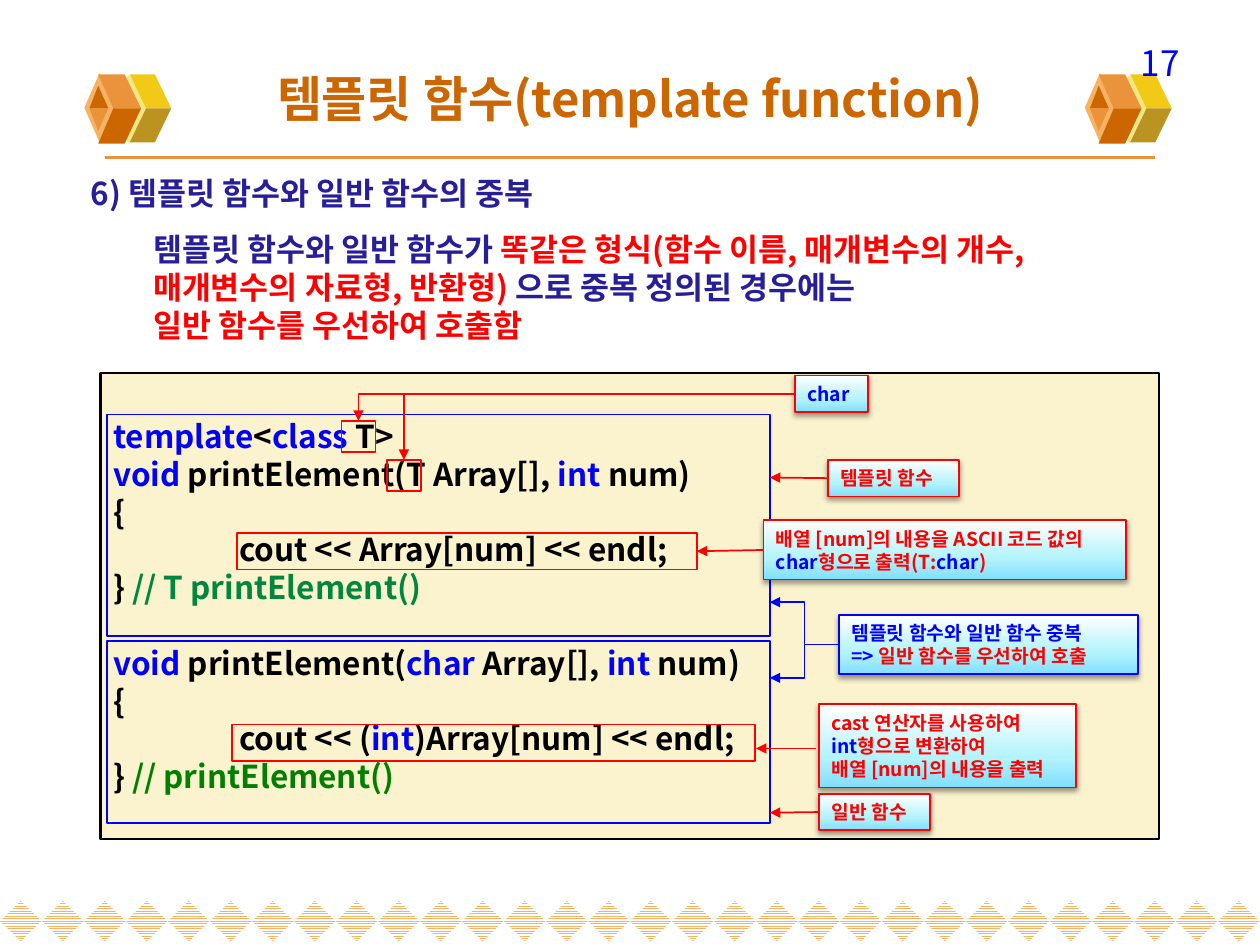
from lxml import etree
from pptx import Presentation
from pptx.dml.color import RGBColor
from pptx.enum.dml import MSO_PATTERN
from pptx.enum.shapes import MSO_CONNECTOR, MSO_SHAPE
from pptx.enum.text import MSO_ANCHOR, PP_ALIGN
from pptx.oxml.ns import qn
from pptx.util import Inches, Pt

RECT, DIAMOND = MSO_SHAPE.RECTANGLE, MSO_SHAPE.DIAMOND
STRAIGHT, ELBOW = MSO_CONNECTOR.STRAIGHT, MSO_CONNECTOR.ELBOW
LEFT, CENTER, RIGHT, JUSTIFY = PP_ALIGN.LEFT, PP_ALIGN.CENTER, PP_ALIGN.RIGHT, PP_ALIGN.JUSTIFY
TOP, MIDDLE = MSO_ANCHOR.TOP, MSO_ANCHOR.MIDDLE
FONT = "Noto Sans CJK KR"
RED, BLUE, BLACK, NAVY, ORANGE = "FF0000", "0000FF", "000000", "271E98", "CC6600"
rgb = RGBColor.from_string

prs = Presentation()
prs.slide_width, prs.slide_height = Inches(10), Inches(7.5)
s = prs.slides.add_slide(prs.slide_layouts[6])


def add_box(at, shape=RECT, fill=None, line=None, width=1):
    sp = s.shapes.add_shape(shape, *map(Inches, at))
    sp.shadow.inherit = False
    if fill:
        sp.fill.solid()
        sp.fill.fore_color.rgb = rgb(fill)
    else:
        sp.fill.background()
    if line:
        sp.line.color.rgb = rgb(line)
        sp.line.width = Pt(width)
    else:
        sp.line.fill.background()
    return sp


def write(sp, paragraphs, size, align=LEFT, anchor=TOP, bold=True):
    """Each paragraph is a list of (text, colour) runs."""
    tf = sp.text_frame
    for name, value in {"word_wrap": True, "vertical_anchor": anchor}.items():
        setattr(tf, name, value)
    for i, runs in enumerate(paragraphs):
        p = tf.paragraphs[0] if i == 0 else tf.add_paragraph()
        p.alignment = align
        p.line_spacing = Pt(round(size * 1.2, 1))
        for text, color in runs:
            if text == "\n":
                p.add_line_break()
                continue
            r = p.add_run()
            r.text = text
            for name, value in {"name": FONT, "size": Pt(size), "bold": bold}.items():
                setattr(r.font, name, value)
            r.font.color.rgb = rgb(color)
            etree.SubElement(r.font._element, qn("a:ea"), typeface=FONT)


# Footer band of hatched diamonds
for i in range(30):
    sp = add_box((i / 3, 7.15, 0.33, 0.32), DIAMOND)
    sp.fill.patterned()
    sp.fill.pattern = MSO_PATTERN.NARROW_HORIZONTAL
    sp.fill.fore_color.rgb = rgb("F5B363")
    sp.fill.back_color.rgb = rgb("FFFFFF")

# Cube ornaments on both sides of the title
back_faces = [
    ("F3C917", [(1.16, 0.86), (1.36, 0.86), (1.23, 0.59), (1.03, 0.59)]),
    ("BB9321", [(1.16, 0.86), (1.36, 0.86), (1.23, 1.13), (1.03, 1.13)]),
]
front_faces = [
    ("EB933B", [(0.9, 0.86), (1.12, 0.86), (0.99, 0.59), (0.78, 0.59)]),
    (ORANGE, [(0.9, 0.86), (1.12, 0.86), (0.99, 1.14), (0.78, 1.14)]),
    (ORANGE, [(0.78, 0.68), (0.71, 0.86), (0.86, 0.86)]),
    ("EB933B", [(0.78, 1.04), (0.71, 0.86), (0.86, 0.86)]),
]
for dx in (0, 7.94):
    for x, y, w, color, faces in ((0.86, 0.59, 0.33, "F1E785", back_faces),
                                  (0.67, 0.58, 0.24, "F5B363", front_faces)):
        add_box((x + dx, y, w, 0.55), DIAMOND, color)
        for face_color, points in faces:
            points = [(Inches(px + dx), Inches(py)) for px, py in points]
            builder = s.shapes.build_freeform(*points[0])
            builder.add_line_segments(points[1:], close=True)
            sp = builder.convert_to_shape()
            sp.shadow.inherit = False
            sp.fill.solid()
            sp.fill.fore_color.rgb = rgb(face_color)
            sp.line.fill.background()

# Slide number, title, heading and explanation
explanation = [
    (" 템플릿 함수와 일반 함수가 ", NAVY), ("똑같은 형식(함수 이름, 매개변수의 개수,", RED), ("\n", RED),
    (" 매개변수의 자료형, 반환형) ", RED), ("으로 중복 정의된 경우에는", NAVY), ("\n", NAVY),
    (" 일반 함수를 우선하여 호출함", RED),
]
for at, runs, size, align, anchor, bold in (
    ((7.13, 0.28, 2.33, 0.3), [("17", BLUE)], 20, RIGHT, TOP, False),
    ((0.5, 0.3, 9, 0.95), [("템플릿 함수(template function)", ORANGE)], 28, CENTER, MIDDLE, True),
    ((0.62, 1.33, 8.99, 0.47), [("6) 템플릿 함수와 일반 함수의 중복", NAVY)], 18, LEFT, TOP, True),
    ((1.06, 1.78, 8.03, 1.01), explanation, 18, LEFT, TOP, True),
):
    write(s.shapes.add_textbox(*map(Inches, at)), [runs], size, align, anchor, bold)

# Code panel
code = [
    [("template", BLUE), ("<", BLACK), ("class", BLUE), (" T>", BLACK)],
    [("void ", BLUE), ("printElement(T Array[], ", BLACK), ("int ", BLUE), ("num)", BLACK)],
    [("{", BLACK)],
    [("cout << Array[num] << endl;", BLACK)],
    [("} ", BLACK), ("// T printElement()", "00863D")],
    [("void ", BLUE), ("printElement(", BLACK), ("char", BLUE), (" Array[], ", BLACK),
     ("int", BLUE), (" num)", BLACK)],
    [("{", BLACK)],
    [("cout << (", BLACK), ("int", BLUE), (")Array[num] << endl;", BLACK)],
    [("} ", BLACK), ("// printElement()", "008000")],
]
panel = add_box((0.8, 2.96, 8.4, 3.7), fill="FBF2CE", line=BLACK, width=1.5)
write(panel, code, 18, anchor=MIDDLE)
code_lines = panel.text_frame.paragraphs
code_lines[5].space_before = Pt(21.6)
for i in (3, 7):  # function bodies are indented
    pPr = code_lines[i]._p.get_or_add_pPr()
    pPr.set("marL", str(Inches(1)))
    pPr.set("indent", "0")

# Frames around the two functions and the marked code
add_box((0.85, 3.29, 5.26, 1.76), line=BLUE)
add_box((0.85, 5.09, 5.26, 1.44), line=BLUE)
class_t = add_box((2.71, 3.34, 0.27, 0.25), line=RED)
param_t = add_box((3.07, 3.65, 0.27, 0.25), line=RED)
cout_array = add_box((1.88, 4.23, 3.65, 0.29), line=RED)
add_box((1.84, 5.75, 4.15, 0.29), line=RED)

# Callouts
callouts = {
    "template": ((6.57, 3.65, 1.04, 0.29), RED, [[("템플릿 함수", RED)]]),
    "overlap": ((6.66, 4.88, 2.37, 0.47), BLUE, [
        [("템플릿 함수와 일반 함수 중복", BLUE)],
        [("=> ", BLUE), ("일반 함수를 우선하여 호출", RED)]]),
    "cast": ((6.5, 5.59, 2.04, 0.66), RED, [
        [("cast 연산자를 사용하여", RED)],
        [("int", BLUE), ("형으로 변환하여", RED)],
        [("배열 [num]의 내용을 출력", RED)]]),
    "plain": ((6.5, 6.3, 0.88, 0.29), RED, [[("일반 함수", RED)]]),
    "output": ((6.06, 4.13, 2.88, 0.47), RED, [
        [("배열 [num]의 내용을 ASCII 코드 값의", RED)],
        [("char", BLUE), ("형으로 출력(T:", RED), ("char", BLUE), (")", RED)]]),
    "char": ((6.31, 2.98, 0.58, 0.29), RED, [[("char", BLUE)]]),
}
boxes = {}
for key, (at, line, paragraphs) in callouts.items():
    sp = boxes[key] = add_box(at, line=line)
    sp.fill.gradient()
    sp.fill.gradient_angle = 90
    stops = sp._element.spPr.find(qn("a:gradFill")).find(qn("a:gsLst"))
    for stop in list(stops):
        stops.remove(stop)
    for pos, color in ((0, "81DEFF"), (35000, "B2F3FC"), (100000, "FFFFFF")):
        stop = etree.SubElement(stops, qn("a:gs"), pos=str(pos))
        etree.SubElement(stop, qn("a:srgbClr"), val=color)
    effects = sp._element.spPr.find(qn("a:effectLst"))
    shadow = etree.SubElement(effects, qn("a:outerShdw"), blurRad=str(Pt(3.1)),
                              dist=str(Pt(1.6)), dir="5400000", rotWithShape="0")
    shade = etree.SubElement(shadow, qn("a:srgbClr"), val=BLACK)
    etree.SubElement(shade, qn("a:alpha"), val="38000")
    write(sp, paragraphs, 11, JUSTIFY, MIDDLE)

# Title rule and arrows: kind, start, end, colour, width, joined start, joined end
for kind, start, end, color, width, begin, finish in (
    (STRAIGHT, (0.83, 1.25), (9.17, 1.25), "EB933B", 2.25, None, None),
    (STRAIGHT, (6.57, 3.79), (6.11, 3.79), RED, 1, "template", None),
    (STRAIGHT, (6.06, 4.36), (5.53, 4.38), RED, 1, "output", (cout_array, 3)),
    (STRAIGHT, (6.5, 6.44), (6.11, 6.45), RED, 1, "plain", None),
    (STRAIGHT, (6.48, 5.94), (6, 5.94), RED, 1, None, None),
    (ELBOW, (6.66, 5.11), (6.11, 4.78), BLUE, 1, "overlap", None),
    (ELBOW, (6.66, 5.11), (6.11, 5.38), BLUE, 1, "overlap", None),
    (ELBOW, (6.31, 3.12), (2.84, 3.34), RED, 1, "char", (class_t, 0)),
    (ELBOW, (6.31, 3.12), (3.21, 3.65), RED, 1, "char", (param_t, 0)),
):
    c = s.shapes.add_connector(kind, *map(Inches, start + end))
    c.line.color.rgb = rgb(color)
    c.line.width = Pt(width)
    if begin:
        c.begin_connect(boxes[begin], 1)
    if finish:
        c.end_connect(*finish)
    spPr = c._element.spPr
    if kind == ELBOW and finish:
        spPr.find(qn("a:prstGeom")).set("prst", "bentConnector2")
    if width == 1:
        etree.SubElement(spPr.find(qn("a:ln")), qn("a:tailEnd"), type="triangle")
    etree.SubElement(spPr, qn("a:effectLst"))

prs.save("out.pptx")
